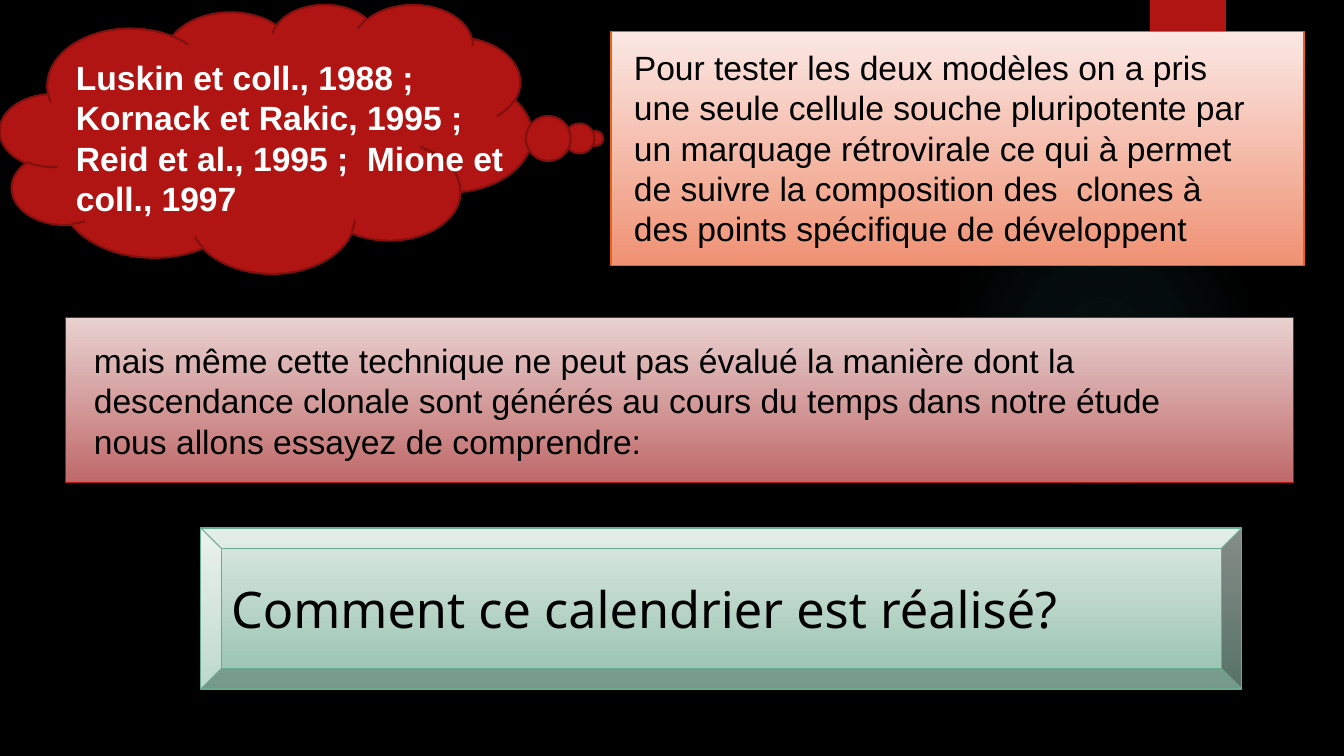
from lxml import etree
from pptx import Presentation
from pptx import util as u
from pptx.dml.color import RGBColor
from pptx.enum import shapes, text
from pptx.oxml import parse_xml
from pptx.oxml.ns import nsdecls, qn

EMU_PER_PX = 914400 / 100.8
SHAPE = shapes.MSO_SHAPE
COLOURS = {
    "background": "000000",
    "ink": "000000",
    "white": "FFFFFF",
    "glow": "50B9C1",
    "red": "B01513",
    "dark_red": "82100E",
    "rose_top": "E8D1D0",
    "rose_bottom": "C06969",
    "orange": "EA6312",
    "orange_top": "FBE8E4",
    "orange_bottom": "EF9173",
    "green": "6AAC90",
    "green_top": "DEEAE4",
    "green_bottom": "93C0AC",
}
AUTHORS = ("Luskin et coll., 1988 ; Kornack et Rakic, 1995 ; "
           "Reid et al., 1995 ;  Mione et coll., 1997")
METHOD = ("Pour tester les deux modèles on a pris une seule cellule souche "
          "pluripotente par un marquage rétrovirale ce qui à permet de suivre "
          "la composition des  clones à des points spécifique de développent")
LIMIT = ("mais même cette technique ne peut pas évalué la manière dont la "
         "descendance clonale sont générés au cours du temps dans notre étude "
         "nous allons essayez de comprendre:")
QUESTION = "Comment ce calendrier est réalisé?"


def px(length):
    return u.Emu(round(length * EMU_PER_PX))


def colour(name):
    return RGBColor.from_string(COLOURS[name])


def add_figure(slide, preset, box, fill, outline=None, width=0.75):
    figure = slide.shapes.add_shape(preset, *map(px, box))
    figure.shadow.inherit = False
    if isinstance(fill, tuple):
        figure.fill.gradient()
        figure.fill.gradient_angle = 270
        for stop, position, name in zip(figure.fill.gradient_stops, (0, 1), fill):
            stop.position = position
            stop.color.rgb = colour(name)
    else:
        figure.fill.solid()
        figure.fill.fore_color.rgb = colour(fill)
    if outline:
        figure.line.color.rgb = colour(outline)
        figure.line.width = u.Pt(width)
    else:
        figure.line.fill.background()
    return figure


def add_glow(slide, box):
    glow = add_figure(slide, SHAPE.OVAL, box, "glow")
    stops = "".join(
        f'<a:gs pos="{position * 1000}"><a:srgbClr val="{COLOURS["glow"]}">'
        f'<a:alpha val="{alpha * 1000}"/></a:srgbClr></a:gs>'
        for position, alpha in ((0, 7), (36, 6), (69, 0)))
    radial = parse_xml(
        f'<a:gradFill {nsdecls("a")}><a:gsLst>{stops}</a:gsLst>'
        '<a:path path="circle"><a:fillToRect l="50000" t="50000" '
        'r="50000" b="50000"/></a:path></a:gradFill>')
    properties = glow._element.spPr
    properties.replace(properties.find(qn("a:solidFill")), radial)


def add_ribbon(slide, box):
    ribbon = add_figure(slide, SHAPE.RECTANGLE, box, "red")
    effects = ribbon._element.spPr.find(qn("a:effectLst"))
    shadow = etree.SubElement(effects, qn("a:outerShdw"), blurRad=str(u.Pt(3)),
                              dist=str(u.Pt(2)), dir="5400000", rotWithShape="0")
    tint = etree.SubElement(shadow, qn("a:srgbClr"), val=COLOURS["ink"])
    etree.SubElement(tint, qn("a:alpha"), val="45000")


def write(frame, words, size, font, ink="ink", bold=False):
    frame.word_wrap = True
    paragraph = frame.paragraphs[0]
    paragraph.text = words
    paragraph.alignment = text.PP_ALIGN.LEFT
    paragraph.font.size = u.Pt(size)
    paragraph.font.name = font
    paragraph.font.bold = bold
    paragraph.font.color.rgb = colour(ink)


def add_passage(slide, box, words, ink="ink", bold=False):
    frame = slide.shapes.add_textbox(*map(px, box)).text_frame
    write(frame, words, 24, "Arial", ink, bold)
    frame.auto_size = text.MSO_AUTO_SIZE.SHAPE_TO_FIT_TEXT


def main():
    deck = Presentation()
    deck.slide_width, deck.slide_height = px(1344), px(756)
    slide = deck.slides.add_slide(deck.slide_layouts[6])
    slide.background.fill.solid()
    slide.background.fill.fore_color.rgb = colour("background")

    add_glow(slide, (949, 184, 310, 310))
    add_ribbon(slide, (1150, 0, 76, 126))
    add_figure(slide, SHAPE.FLOWCHART_PROCESS, (66, 318, 1228, 165),
               ("rose_top", "rose_bottom"), "red")
    add_figure(slide, SHAPE.FLOWCHART_PROCESS, (611, 32, 693, 234),
               ("orange_top", "orange_bottom"), "orange")
    cloud = add_figure(slide, SHAPE.CLOUD_CALLOUT, (0, 4, 532, 269),
                       "red", "dark_red", 1.5)
    cloud.adjustments[0], cloud.adjustments[1] = 0.62, 0

    add_passage(slide, (66, 52, 466, 173), AUTHORS, "white", True)
    add_passage(slide, (624, 42, 638, 214), METHOD)
    add_passage(slide, (84, 335, 1158, 132), LIMIT)

    question = add_figure(slide, SHAPE.BEVEL, (201, 528, 1041, 161),
                          ("green_top", "green_bottom"), "green")
    write(question.text_frame, QUESTION, 36, "Noto Sans")
    question.text_frame.vertical_anchor = text.MSO_ANCHOR.MIDDLE

    deck.save("out.pptx")


if __name__ == "__main__":
    main()
